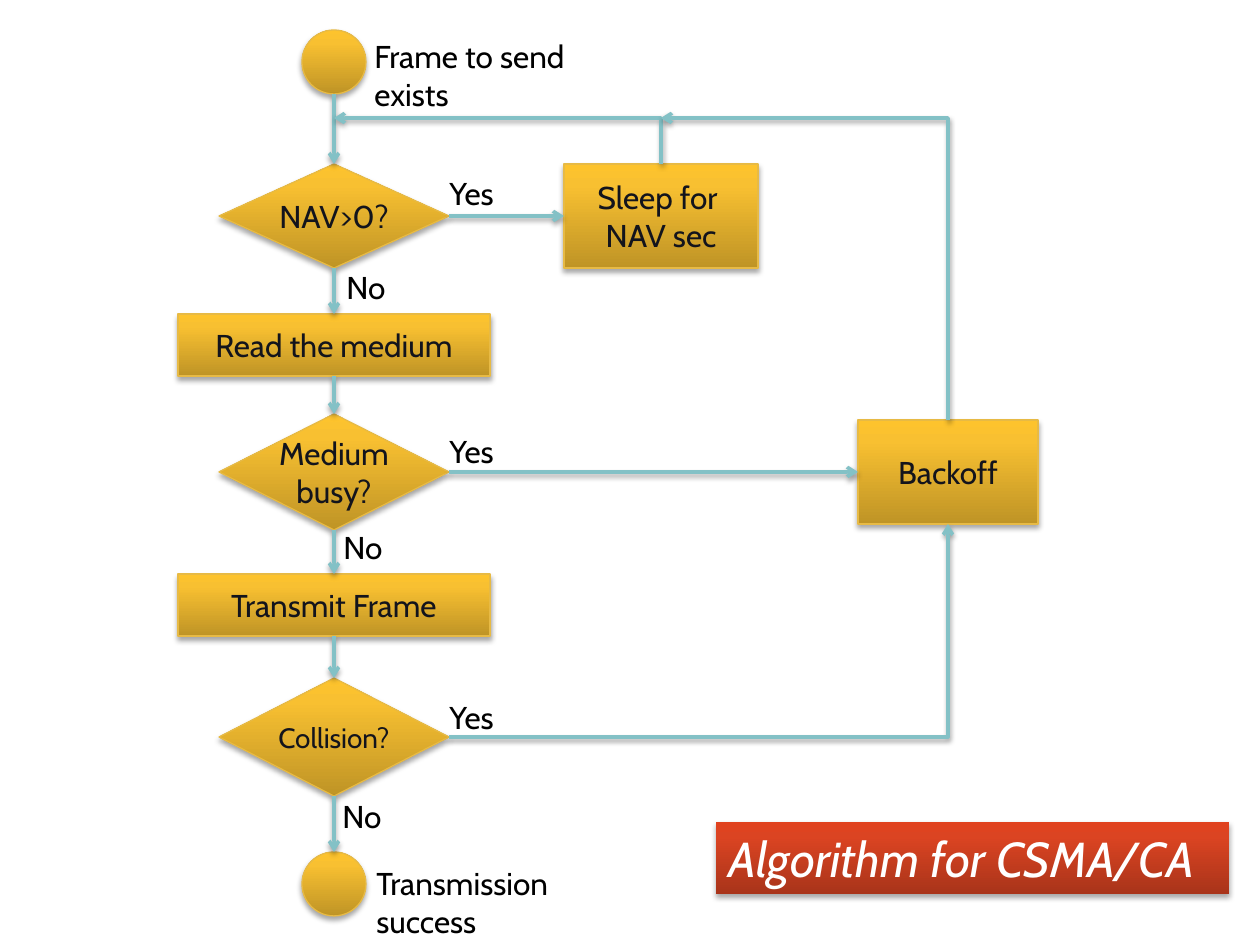
import itertools

import lxml.etree
import pptx
import pptx.dml.color
import pptx.enum.shapes
import pptx.enum.text
import pptx.oxml.ns
import pptx.util

KIND = pptx.enum.shapes.MSO_SHAPE
LINK = pptx.enum.shapes.MSO_CONNECTOR
ALIGN = pptx.enum.text.PP_ALIGN
ANCHOR = pptx.enum.text.MSO_ANCHOR
FIT = pptx.enum.text.MSO_AUTO_SIZE
SCALE = 914400 / 126
GOLD = [(0, "BF9426"), (80, "F8C031"), (100, "FDC32D")]
RED = [(0, "A9341A"), (80, "DB4422"), (100, "E0421E")]


def px(num):
    return pptx.util.Emu(round(num * SCALE))


def rgb(code):
    return pptx.dml.color.RGBColor.from_string(code)


def tag(name):
    return pptx.oxml.ns.qn("a:" + name)


def sub(root, name, **attrs):
    return lxml.etree.SubElement(root, tag(name), attrs)


class Chart:
    font = "Cabin"
    ink = "13141C"
    black = "000000"
    white = "FFFFFF"
    edge = "E7BA45"
    wire = "83C1C6"

    def __init__(self, slide):
        self.slide = slide

    def shade(self, root, alpha, dist):
        glow = root.find(tag("effectLst"))
        if glow is None:
            glow = sub(root, "effectLst")
        drop = sub(glow, "outerShdw", blurRad="39370", dist=str(dist),
                   dir="5400000", rotWithShape="0")
        tint = sub(drop, "srgbClr", val=self.black)
        sub(tint, "alpha", val=str(alpha * 1000))

    def paint(self, shape, stops):
        shape.fill.gradient()
        shape.fill.gradient_angle = 90
        root = shape._element.spPr
        ramp = root.find(tag("gradFill")).find(tag("gsLst"))
        for old in list(ramp):
            ramp.remove(old)
        for pos, code in stops:
            stop = sub(ramp, "gs", pos=str(pos * 1000))
            sub(stop, "srgbClr", val=code)
        shape.shadow.inherit = False
        self.shade(root, 35, 22860)

    def text(self, frame, lines, size, code, align, slant=None):
        for num, line in enumerate(lines):
            para = frame.add_paragraph() if num else frame.paragraphs[0]
            para.alignment = align
            run = para.add_run()
            run.text = line
            run.font.name = self.font
            run.font.size = pptx.util.Pt(size)
            run.font.italic = slant
            run.font.color.rgb = rgb(code)

    def node(self, kind, left, top, width, height, lines=(), size=18):
        shape = self.slide.shapes.add_shape(
            kind, px(left), px(top), px(width), px(height))
        shape.line.color.rgb = rgb(self.edge)
        shape.line.width = pptx.util.Pt(0.75)
        self.paint(shape, GOLD)
        frame = shape.text_frame
        frame.word_wrap = True
        frame.vertical_anchor = ANCHOR.MIDDLE
        if kind == KIND.FLOWCHART_DECISION:
            frame.margin_left = frame.margin_right = 0
        self.text(frame, lines, size, self.ink, ALIGN.CENTER)
        return shape

    def label(self, left, top, width, line, wrap=False):
        box = self.slide.shapes.add_textbox(
            px(left), px(top), px(width), px(50))
        box.text_frame.word_wrap = wrap
        self.text(box.text_frame, [line], 18, self.black, ALIGN.LEFT)

    def title(self, left, top, width, height, line):
        shape = self.slide.shapes.title
        shape.left, shape.top = px(left), px(top)
        shape.width, shape.height = px(width), px(height)
        self.paint(shape, RED)
        frame = shape.text_frame
        frame.word_wrap = False
        frame.auto_size = FIT.NONE
        frame.vertical_anchor = ANCHOR.TOP
        self.text(frame, [line], 28, self.white, ALIGN.LEFT, True)

    def arrow(self, start, end, kind=LINK.STRAIGHT, tip="tailEnd"):
        wire = self.slide.shapes.add_connector(
            kind, *[px(num) for num in start + end])
        wire.line.color.rgb = rgb(self.wire)
        wire.line.width = pptx.util.Pt(2)
        root = wire._element.spPr
        sub(root.find(tag("ln")), tip, type="arrow")
        if kind == LINK.ELBOW:
            root.find(tag("prstGeom")).set("prst", "bentConnector2")
        self.shade(root, 38, 20320)
        return wire


def main():
    deck = pptx.Presentation()
    deck.slide_width, deck.slide_height = px(1260), px(945)
    chart = Chart(deck.slides.add_slide(deck.slide_layouts[5]))
    chart.title(716, 822, 513, 72, "Algorithm for CSMA/CA")

    axis = 334
    dot, test, step = (KIND.FLOWCHART_CONNECTOR, KIND.FLOWCHART_DECISION,
                       KIND.FLOWCHART_PROCESS)
    wide = {dot: 64, test: 230, step: 312}
    rows = [
        (dot, 30, 64, [], 18),
        (test, 164, 104, ["NAV>0?"], 18),
        (step, 314, 62, ["Read the medium"], 18),
        (test, 414, 116, ["Medium busy?"], 18),
        (step, 574, 62, ["Transmit Frame"], 18),
        (test, 678, 118, ["Collision?"], 16),
        (dot, 852, 64, [], 18),
    ]
    nodes = [chart.node(kind, axis - wide[kind] // 2, top, wide[kind],
                        tall, lines, size)
             for kind, top, tall, lines, size in rows]
    for above, below in itertools.pairwise(rows):
        chart.arrow((axis, above[1] + above[2]), (axis, below[1]))

    sleep = chart.node(step, 564, 164, 194, 104, ["Sleep for ", "NAV sec"])
    back = chart.node(step, 858, 420, 180, 104, ["Backoff"])
    chart.arrow((449, 216), (564, 216))
    chart.arrow((449, 472), (858, 472))

    loop = 118
    for start, end, goal in [(axis, (661, 164), sleep),
                             (661, (948, 420), back)]:
        wire = chart.arrow((start, loop), end, LINK.ELBOW, "headEnd")
        wire.end_connect(goal, 0)
    wire = chart.arrow((449, 737), (948, 524), LINK.ELBOW)
    wire.begin_connect(nodes[5], 3)
    wire.end_connect(back, 2)

    for top in (168, 426, 692):
        chart.label(437, top, 71, "Yes")
    for left, top in [(334, 262), (331, 522), (330, 791)]:
        chart.label(left, top, 64, "No")
    chart.label(362, 31, 288, "Frame to send exists", True)
    chart.label(364, 858, 290, "Transmission success", True)
    deck.save("out.pptx")


if __name__ == "__main__":
    main()
